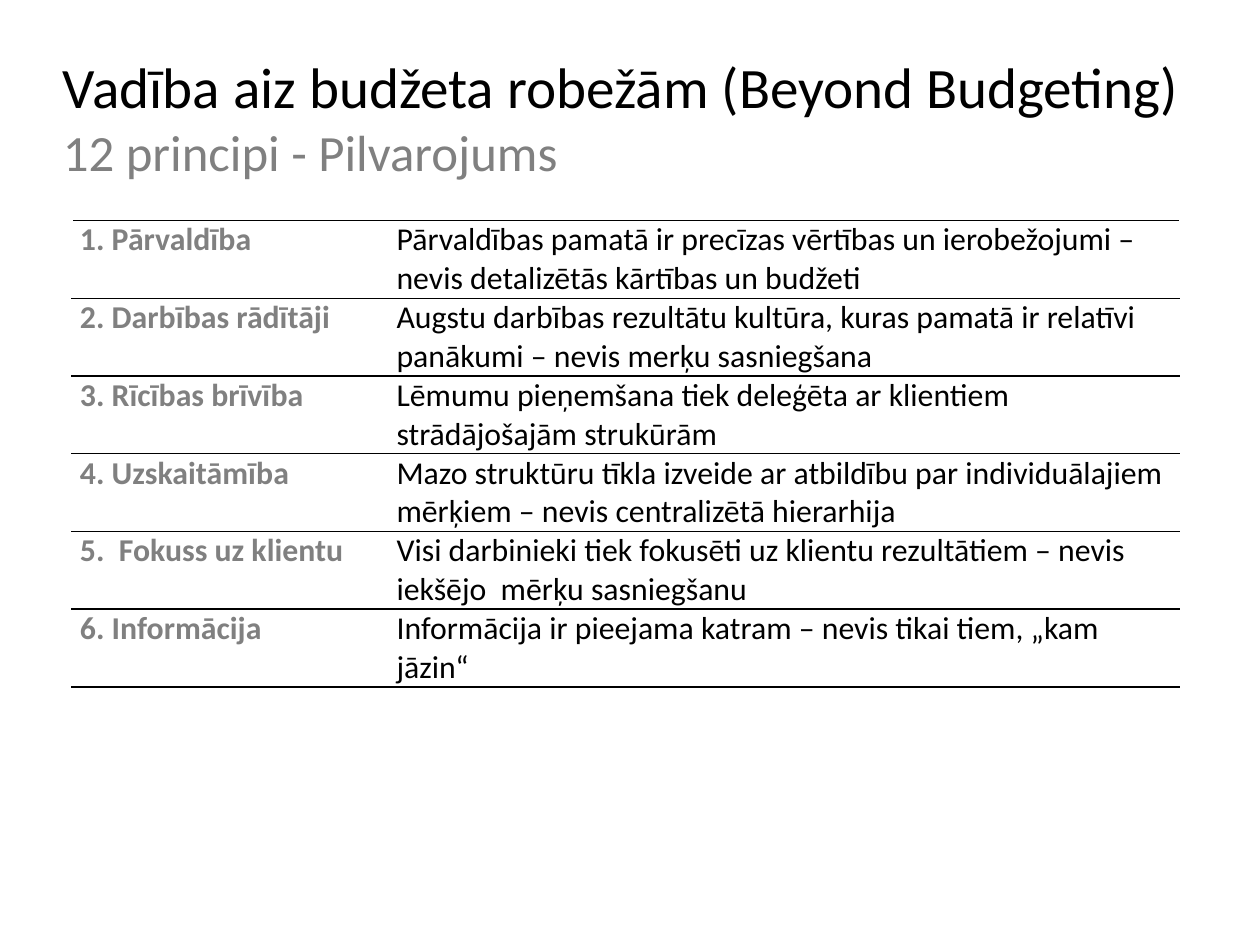
import pptx
import pptx.dml.color
import pptx.enum.text
import pptx.oxml
import pptx.oxml.ns
import pptx.util

Inches = pptx.util.Inches
Pt = pptx.util.Pt
RGBColor = pptx.dml.color.RGBColor

BLACK = RGBColor(0x00, 0x00, 0x00)
GREY = RGBColor(0x80, 0x80, 0x80)
WHITE = RGBColor(0xFF, 0xFF, 0xFF)

CM_PER_INCH = 2.54
PLAIN_TABLE_STYLE = "{2D5ABB26-0587-4C30-8999-92F81FD0307C}"

PRINCIPLES = [
    ("1. Pārvaldība",
     "Pārvaldības pamatā ir precīzas vērtības un ierobežojumi – nevis detalizētās kārtības un budžeti"),
    ("2. Darbības rādītāji",
     "Augstu darbības rezultātu kultūra, kuras pamatā ir relatīvi panākumi – nevis merķu sasniegšana"),
    ("3. Rīcības brīvība",
     "Lēmumu pieņemšana tiek deleģēta ar klientiem strādājošajām strukūrām"),
    ("4. Uzskaitāmība",
     "Mazo struktūru tīkla izveide ar atbildību par individuālajiem mērķiem – nevis centralizētā hierarhija"),
    ("5.  Fokuss uz klientu",
     "Visi darbinieki tiek fokusēti uz klientu rezultātiem – nevis iekšējo  mērķu sasniegšanu"),
    ("6. Informācija",
     "Informācija ir pieejama katram – nevis tikai tiem, „kam jāzin“"),
]


class PageBuilder:
    """Holds the text style and the page being built."""

    font_name = "Calibri"
    cell_size = 20
    row_height = 0.68

    def __init__(self, page):
        self.page = page

    def style(self, span, size, color, bold=False):
        span.font.name = self.font_name
        span.font.size = Pt(size)
        span.font.bold = bold
        span.font.color.rgb = color

    def title(self, left, top, width, height, lines):
        box = self.page.shapes.add_textbox(
            Inches(left), Inches(top), Inches(width), Inches(height))
        frame = box.text_frame
        frame.word_wrap = True
        frame.vertical_anchor = pptx.enum.text.MSO_ANCHOR.MIDDLE
        frame.margin_left = frame.margin_right = 0
        frame.margin_top = frame.margin_bottom = 0
        frame.text = "\v".join(text for text, size, color in lines)
        para = frame.paragraphs[0]
        para.line_spacing = 1.01
        for span, (text, size, color) in zip(para.runs, lines):
            self.style(span, size, color)

    def border(self, cell, side, color):
        line = pptx.oxml.parse_xml(
            f'<a:{side} {pptx.oxml.ns.nsdecls("a")} w="{Pt(1)}">'
            f'<a:solidFill><a:srgbClr val="{color}"/></a:solidFill></a:{side}>')
        cell._tc.get_or_add_tcPr().append(line)

    def cell(self, cell, text, color, bold, outer_side):
        cell.margin_left = cell.margin_right = Inches(0.07)
        cell.margin_top = cell.margin_bottom = 0
        self.border(cell, outer_side, WHITE)
        self.border(cell, "lnT", BLACK)
        self.border(cell, "lnB", BLACK)
        cell.fill.solid()
        cell.fill.fore_color.rgb = WHITE
        cell.text_frame.text = text
        self.style(cell.text_frame.paragraphs[0].runs[0],
                   self.cell_size, color, bold)

    def table(self, left, top, widths, rows):
        table = self.page.shapes.add_table(
            len(rows), len(widths), Inches(left), Inches(top),
            Inches(sum(widths)), Inches(self.row_height * len(rows))).table
        table.first_row = False
        table.horz_banding = False
        style_id = table._tbl.tblPr.find(pptx.oxml.ns.qn("a:tableStyleId"))
        style_id.text = PLAIN_TABLE_STYLE
        for column, width in zip(table.columns, widths):
            column.width = Inches(width)
        for row, (name, meaning) in zip(table.rows, rows):
            row.height = Inches(self.row_height)
            self.cell(row.cells[0], name, GREY, True, "lnL")
            self.cell(row.cells[1], meaning, BLACK, False, "lnR")


def main():
    # Page of 28 by 21 centimetres
    deck = pptx.Presentation()
    deck.slide_width = Inches(28 / CM_PER_INCH)
    deck.slide_height = Inches(21 / CM_PER_INCH)
    builder = PageBuilder(deck.slides.add_slide(deck.slide_layouts[6]))

    # Title and subtitle
    builder.title(0.55, 0.33, 9.92, 1.38, [
        ("Vadība aiz budžeta robežām (Beyond Budgeting)", 36, BLACK),
        ("12 principi - Pilvarojums", 32, GREY),
    ])

    # Principles
    builder.table(0.63, 1.93, [2.77, 6.92], PRINCIPLES)

    deck.save("out.pptx")


if __name__ == "__main__":
    main()
